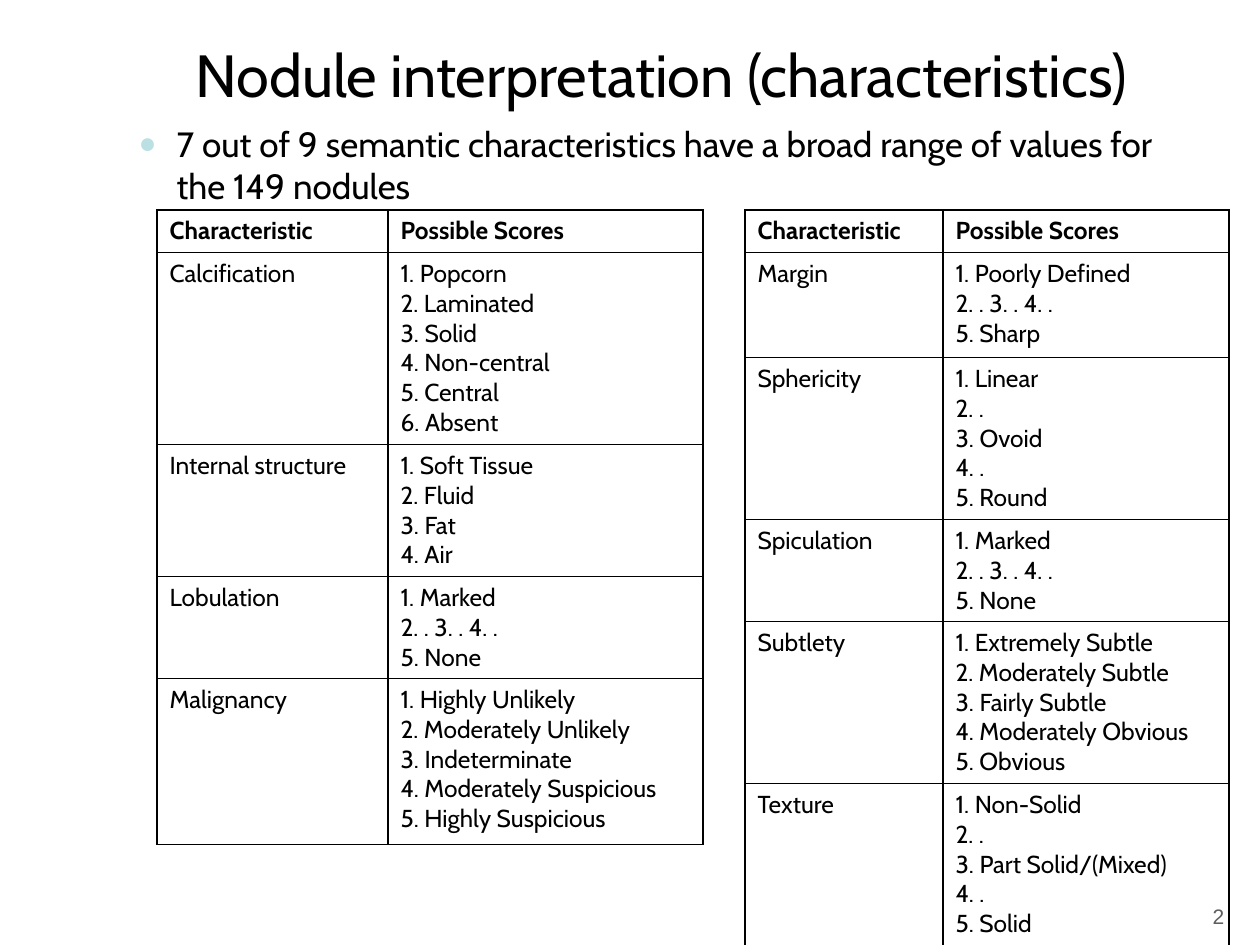
from lxml import etree
from pptx import Presentation
from pptx.dml.color import RGBColor
from pptx.enum.text import MSO_ANCHOR, MSO_AUTO_SIZE, PP_ALIGN
from pptx.oxml import parse_xml
from pptx.oxml.ns import nsdecls, qn
from pptx.util import Pt

PX = 914400 // 126
CENTER, LEFT = PP_ALIGN.CENTER, PP_ALIGN.LEFT
TOP, MIDDLE, BOTTOM = MSO_ANCHOR.TOP, MSO_ANCHOR.MIDDLE, MSO_ANCHOR.BOTTOM
NO_AUTOFIT = MSO_AUTO_SIZE.NONE

BLACK, GREY, PALE_BLUE = "000000", "5F5F5F", "BBE0E3"
CELL_FONT = {"name": "Cabin", "size": Pt(14)}
HEADER = ("Characteristic", ["Possible Scores"], 42)
MIDDLE_SCORES = "2. . 3. . 4. ."

# Each row: characteristic, possible scores, height in px
LEFT_ROWS = [
    HEADER,
    ("Calcification", ["1. Popcorn", "2. Laminated", "3. Solid",
                       "4. Non-central", "5. Central", "6. Absent"], 192),
    ("Internal structure", ["1. Soft Tissue", "2. Fluid", "3. Fat", "4. Air"], 132),
    ("Lobulation", ["1. Marked", MIDDLE_SCORES, "5. None"], 102),
    ("Malignancy", ["1. Highly Unlikely", "2. Moderately Unlikely",
                    "3. Indeterminate", "4. Moderately Suspicious",
                    "5. Highly Suspicious"], 166),
]
RIGHT_ROWS = [
    HEADER,
    ("Margin", ["1. Poorly Defined", MIDDLE_SCORES, "5. Sharp"], 105),
    ("Sphericity", ["1. Linear", "2. .", "3. Ovoid", "4. .", "5. Round"], 162),
    ("Spiculation", ["1. Marked", MIDDLE_SCORES, "5. None"], 102),
    ("Subtlety", ["1. Extremely Subtle", "2. Moderately Subtle", "3. Fairly Subtle",
                  "4. Moderately Obvious", "5. Obvious"], 162),
    ("Texture", ["1. Non-Solid", "2. .", "3. Part Solid/(Mixed)", "4. .",
                 "5. Solid"], 162),
]


def px(n):
    return n * PX


def rgb(color):
    return RGBColor.from_string(color)


def set_attrs(obj, values):
    for name, value in values.items():
        setattr(obj, name, value)


def format_text(tf, font, color=BLACK, align=LEFT):
    for p in tf.paragraphs:
        p.alignment = align
        for r in p.runs:
            set_attrs(r.font, font)
            r.font.color.rgb = rgb(color)


def fill_text(sp, box, text, font, color=BLACK, align=LEFT, anchor=TOP):
    """Place a text shape at box (px) and give it formatted text."""
    for name, n in zip(("left", "top", "width", "height"), box):
        setattr(sp, name, px(n))
    tf = sp.text_frame
    tf.text = text
    set_attrs(tf, {"word_wrap": True, "auto_size": NO_AUTOFIT,
                   "vertical_anchor": anchor})
    format_text(tf, font, color, align)
    return tf


def add_bullet(p, char, color, percent, indent):
    p.space_before = Pt(5.8)
    pPr = p._p.get_or_add_pPr()
    pPr.set("marL", str(px(indent)))
    pPr.set("indent", str(-px(indent)))
    buClr = etree.SubElement(pPr, qn("a:buClr"))
    etree.SubElement(buClr, qn("a:srgbClr"), val=color)
    etree.SubElement(pPr, qn("a:buSzPct"), val=str(percent * 1000))
    etree.SubElement(pPr, qn("a:buFont"), typeface="Arial")
    etree.SubElement(pPr, qn("a:buChar"), char=char)


def set_borders(cell, color):
    tcPr = cell._tc.get_or_add_tcPr()
    for i, side in enumerate(("lnL", "lnR", "lnT", "lnB")):
        tcPr.insert(i, parse_xml(
            f'<a:{side} {nsdecls("a")} w="{Pt(1)}"><a:solidFill>'
            f'<a:srgbClr val="{color}"/></a:solidFill></a:{side}>'))


def add_score_table(slide, left, top, col_widths, rows):
    height = sum(row[2] for row in rows)
    table = slide.shapes.add_table(len(rows), 2, px(left), px(top),
                                   px(sum(col_widths)), px(height)).table
    set_attrs(table, {"first_row": False, "horz_banding": False})
    for column, width in zip(table.columns, col_widths):
        column.width = px(width)
    for i, (characteristic, scores, row_height) in enumerate(rows):
        table.rows[i].height = px(row_height)
        for cell, text in zip(table.rows[i].cells,
                              (characteristic, "\n".join(scores))):
            cell.text_frame.text = text
            format_text(cell.text_frame, {**CELL_FONT, "bold": i == 0})
            cell.fill.background()
            set_borders(cell, BLACK)


def main():
    prs = Presentation()
    prs.slide_width, prs.slide_height = px(1260), px(945)
    slide = prs.slides.add_slide(prs.slide_layouts[1])
    title, body = slide.placeholders

    fill_text(title, (126, 32, 1071, 84), "Nodule interpretation (characteristics)",
              {"name": "Cabin", "size": Pt(34)}, align=CENTER, anchor=MIDDLE)
    tf = fill_text(body, (126, 116, 1071, 84),
                   "7 out of 9 semantic characteristics have a broad range of "
                   "values for the 149 nodules",
                   {"name": "Cabin", "size": Pt(20)})
    add_bullet(tf.paragraphs[0], "●", PALE_BLUE, 85, 38)

    add_score_table(slide, 157, 210, (231, 315), LEFT_ROWS)
    add_score_table(slide, 745, 210, (198, 286), RIGHT_ROWS)

    page_number = slide.shapes.add_textbox(0, 0, 0, 0)
    fill_text(page_number, (1187, 869, 63, 66), "2",
              {"name": "Arial", "size": Pt(12)}, GREY, CENTER, BOTTOM)
    prs.save("out.pptx")


if __name__ == "__main__":
    main()
